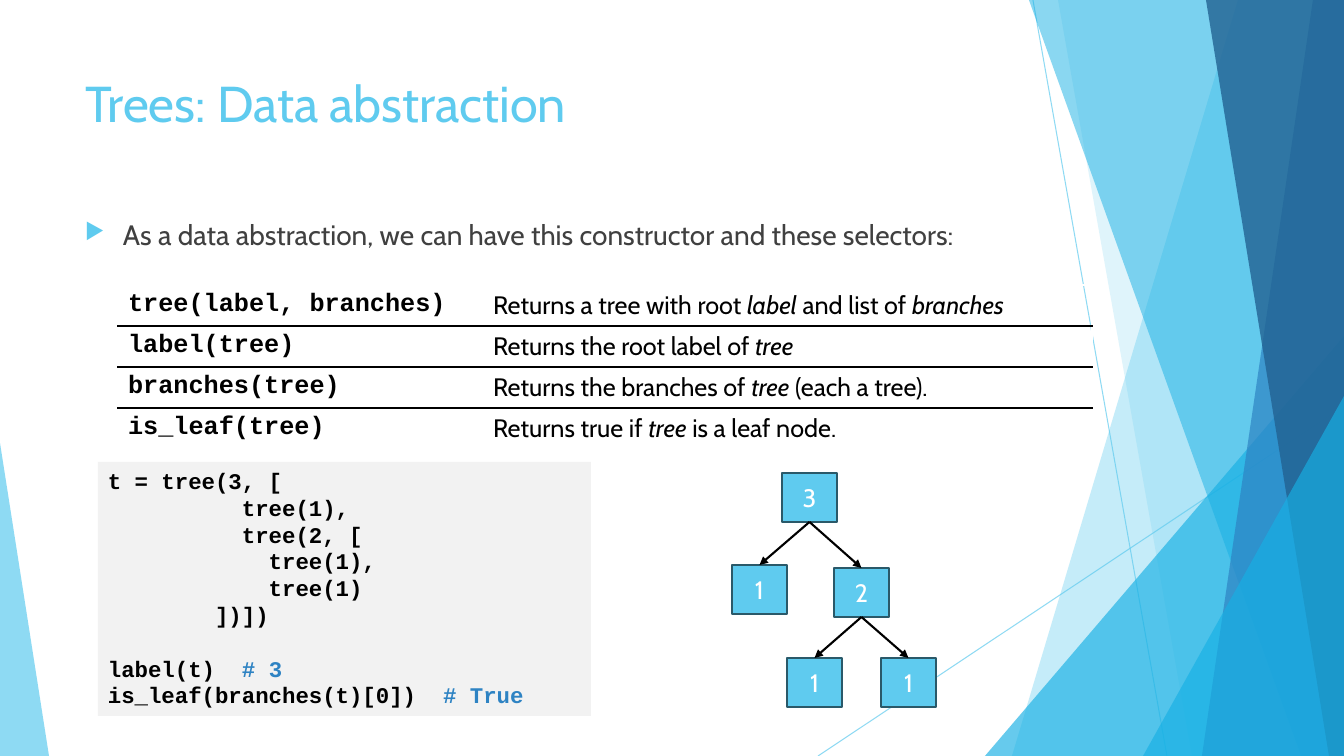
"""Build the slide "Trees: Data abstraction"."""
from lxml import etree
from pptx import Presentation
from pptx.dml.color import RGBColor
from pptx.enum.shapes import MSO_CONNECTOR, MSO_SHAPE
from pptx.enum.text import MSO_ANCHOR, MSO_AUTO_SIZE, PP_ALIGN
from pptx.oxml import parse_xml
from pptx.oxml.ns import nsdecls, qn
from pptx.util import Pt

STRAIGHT = MSO_CONNECTOR.STRAIGHT
RECT, TRIANGLE = MSO_SHAPE.RECTANGLE, MSO_SHAPE.ISOSCELES_TRIANGLE
TOP, MIDDLE = MSO_ANCHOR.TOP, MSO_ANCHOR.MIDDLE
LEFT, CENTER = PP_ALIGN.LEFT, PP_ALIGN.CENTER
NO_FIT = MSO_AUTO_SIZE.NONE
PX = 914400 / 100.8
W, H = 1344, 756
SANS, MONO = "Cabin", "Courier New"
COLORS = {
    "sky": "5FCBEF", "cyan": "17B0E4", "blue": "2E83C3", "navy": "226292",
    "edge": "2A5969", "text": "404040", "black": "000000",
    "white": "FFFFFF", "panel": "F2F2F2",
}


def px(*lengths):
    return [round(n * PX) for n in lengths]


def add_run(p, text, color, **font):
    r = p.add_run()
    r.text = text
    r.font.color.rgb = RGBColor.from_string(COLORS[color])
    for name, value in font.items():
        setattr(r.font, name, value)


prs = Presentation()
prs.slide_width, prs.slide_height = px(W, H)
s = prs.slides.add_slide(prs.slide_layouts[5])

# name of each facet: (top x, bottom x) of a band, or box and apex of a triangle
facets = [
    ((1238, 1012), "sky", 36),
    ((1058, 1192), "sky", 20),
    ((985, 336, 359, 420, 1), "cyan", 66),
    ((1029, 1301), "cyan", 50),
    ((1313, 1202), "blue", 70),
    ((1206, 1329), "navy", 80),
    ((1143, 396, 201, 360, 1), "cyan", 66),
    ((0, 443, 49, 313, 0), "sky", 70),
]
lines = [((1033, 0, 1167, H), 70), ((W, 406, 818, H), 70)]
for ends, alpha in lines:
    ray = s.shapes.add_connector(STRAIGHT, *px(*ends))
    ray.line.width = Pt(0.75)
    ray.line.color.rgb = RGBColor.from_string(COLORS["sky"])
    clr = ray.line._ln.find(".//" + qn("a:srgbClr"))
    etree.SubElement(clr, qn("a:alpha"), val=str(alpha * 1000))
    etree.SubElement(ray._element.spPr, qn("a:effectLst"))

for geometry, color, alpha in facets:
    if len(geometry) == 2:
        top, bottom = geometry
        builder = s.shapes.build_freeform(top, 0, scale=PX)
        builder.add_line_segments([(W, 0), (W, H), (bottom, H)])
        sp = builder.convert_to_shape()
    else:
        sp = s.shapes.add_shape(TRIANGLE, *px(*geometry[:4]))
        sp.adjustments[0] = geometry[4]
    sp.shadow.inherit = False
    sp.line.fill.background()
    sp.fill.solid()
    sp.fill.fore_color.rgb = RGBColor.from_string(COLORS[color])
    clr = sp._element.spPr.find(".//" + qn("a:srgbClr"))
    etree.SubElement(clr, qn("a:alpha"), val=str(alpha * 1000))

title = s.shapes.title
title.left, title.top, title.width, title.height = px(75, 67, 947, 145)
tf = title.text_frame
for name, value in {"auto_size": NO_FIT, "vertical_anchor": TOP, "word_wrap": True}.items():
    setattr(tf, name, value)
p = tf.paragraphs[0]
p.alignment = LEFT
add_run(p, "Trees: Data abstraction", "sky", name=SANS, size=Pt(36))

intro = s.shapes.add_textbox(*px(75, 213, 947, 454))
intro.text_frame.word_wrap = True
p = intro.text_frame.paragraphs[0]
p.space_before = Pt(10)
add_run(p, "As a data abstraction, we can have this constructor and these selectors:",
        "text", name=SANS, size=Pt(20))
pPr = p._p.get_or_add_pPr()
indent = px(38)[0]
pPr.set("marL", str(indent))
pPr.set("indent", str(-indent))
clr = etree.SubElement(pPr, qn("a:buClr"))
etree.SubElement(clr, qn("a:srgbClr"), val=COLORS["sky"])
etree.SubElement(pPr, qn("a:buSzPct"), val="80000")
etree.SubElement(pPr, qn("a:buChar"), char="▶")

functions = [
    ("tree(label, branches)", ["Returns a tree with root ", "label", " and list of ", "branches"]),
    ("label(tree)", ["Returns the root label of ", "tree"]),
    ("branches(tree)", ["Returns the branches of ", "tree", " (each a tree)."]),
    ("is_leaf(tree)", ["Returns true if ", "tree", " is a leaf node."]),
]
table = s.shapes.add_table(len(functions), 2, *px(118, 285, 974, 164)).table
table.first_row = table.horz_banding = False
for column, width in zip(table.columns, px(365, 609)):
    column.width = width
for i, (call, meaning) in enumerate(functions):
    table.rows[i].height = px(41)[0]
    name_cell, meaning_cell = table.rows[i].cells
    add_run(name_cell.text_frame.paragraphs[0], call, "black", name=MONO, size=Pt(18), bold=True)
    for j, part in enumerate(meaning):
        add_run(meaning_cell.text_frame.paragraphs[0], part, "black",
                name=SANS, size=Pt(18), italic=j % 2 == 1)
    for cell in (name_cell, meaning_cell):
        tcPr = cell._tc.get_or_add_tcPr()
        for tag, shown in (("lnT", i > 0), ("lnB", i < len(functions) - 1)):
            if shown:
                tcPr.append(parse_xml(
                    f'<a:{tag} {nsdecls("a")} w="12700"><a:solidFill>'
                    f'<a:srgbClr val="{COLORS["black"]}"/></a:solidFill></a:{tag}>'))
        cell.fill.background()

code = [
    ("t = tree(3, [", ""),
    ("          tree(1),", ""),
    ("          tree(2, [", ""),
    ("            tree(1),", ""),
    ("            tree(1)", ""),
    ("        ])])", ""),
    ("label(t)  ", "# 3"),
    ("is_leaf(branches(t)[0])  ", "# True"),
]
panel = s.shapes.add_shape(RECT, *px(98, 462, 493, 254))
panel.shadow.inherit = False
panel.line.fill.background()
panel.fill.solid()
panel.fill.fore_color.rgb = RGBColor.from_string(COLORS["panel"])
tf = panel.text_frame
tf.vertical_anchor = TOP
for i, (statement, comment) in enumerate(code):
    p = tf.add_paragraph() if i else tf.paragraphs[0]
    p.alignment = LEFT
    if statement.startswith("label"):
        p.space_before = Pt(19)
    for text, color in ((statement, "black"), (comment, "blue")):
        if text:
            add_run(p, text, color, name=MONO, size=Pt(16), bold=True)

nodes = []
for x, y, label in [(782, 473, "3"), (732, 565, "1"), (834, 568, "2"),
                    (787, 658, "1"), (881, 658, "1")]:
    sp = s.shapes.add_shape(RECT, *px(x, y, 55, 49))
    sp.shadow.inherit = False
    sp.fill.solid()
    sp.fill.fore_color.rgb = RGBColor.from_string(COLORS["sky"])
    sp.line.color.rgb = RGBColor.from_string(COLORS["edge"])
    sp.line.width = Pt(1.5)
    sp.text_frame.vertical_anchor = MIDDLE
    p = sp.text_frame.paragraphs[0]
    p.alignment = CENTER
    add_run(p, label, "white", name=SANS, size=Pt(18))
    nodes.append(sp)

for parent, child in [(0, 1), (0, 2), (2, 3), (2, 4)]:
    branch = s.shapes.add_connector(STRAIGHT, 0, 0, 0, 0)
    branch.begin_connect(nodes[parent], 2)
    branch.end_connect(nodes[child], 0)
    branch.line.width = Pt(1.5)
    branch.line.color.rgb = RGBColor.from_string(COLORS["black"])
    etree.SubElement(branch.line._ln, qn("a:tailEnd"), type="triangle")
    etree.SubElement(branch._element.spPr, qn("a:effectLst"))

prs.save("out.pptx")
